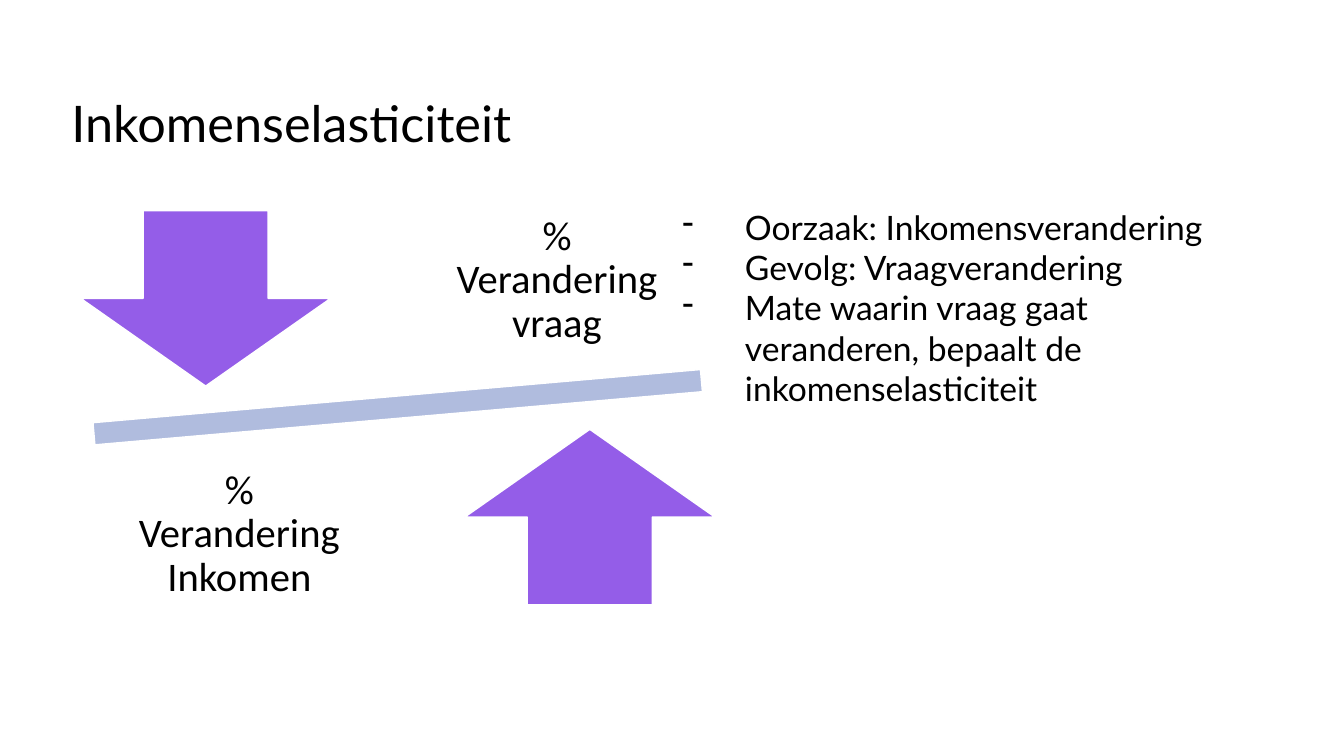
from dataclasses import dataclass

from lxml import etree
from pptx import Presentation
from pptx.dml.color import RGBColor
from pptx.enum.shapes import MSO_SHAPE
from pptx.enum.text import MSO_ANCHOR, PP_ALIGN
from pptx.oxml.ns import qn
from pptx.util import Inches, Pt

DOWN_ARROW = MSO_SHAPE.DOWN_ARROW
UP_ARROW = MSO_SHAPE.UP_ARROW
BEAM = MSO_SHAPE.MATH_MINUS
MIDDLE = MSO_ANCHOR.MIDDLE
CENTER = PP_ALIGN.CENTER


@dataclass(frozen=True)
class Theme:
    text: RGBColor = RGBColor(0x00, 0x00, 0x00)
    outline: RGBColor = RGBColor(0xFF, 0xFF, 0xFF)
    arrow: RGBColor = RGBColor(0x94, 0x5D, 0xE8)
    beam: RGBColor = RGBColor(0xB0, 0xBC, 0xDE)
    main_font: str = "Lato"
    label_font: str = "Calibri"
    title_size: Pt = Pt(36)
    label_size: Pt = Pt(29)
    body_size: Pt = Pt(24)


THEME = Theme()


def style_paragraph(paragraph, font_name, size):
    paragraph.font.name = font_name
    paragraph.font.size = size
    paragraph.font.color.rgb = THEME.text


def add_text_frame(slide, left, top, width, height):
    box = slide.shapes.add_textbox(
        Inches(left), Inches(top), Inches(width), Inches(height))
    box.text_frame.word_wrap = True
    return box.text_frame


def add_title(slide, title):
    frame = add_text_frame(slide, 0.61, 0.86, 10.55, 1.31)
    frame.text = title
    style_paragraph(frame.paragraphs[0], THEME.main_font, THEME.title_size)


def add_balance_part(slide, preset, left, top, width, height, fill, rotation=0):
    part = slide.shapes.add_shape(
        preset, Inches(left), Inches(top), Inches(width), Inches(height))
    part.shadow.inherit = False
    part.fill.solid()
    part.fill.fore_color.rgb = fill
    part.line.color.rgb = THEME.outline
    part.line.width = Pt(1)
    part.rotation = rotation


def add_label(slide, left, top, label):
    frame = add_text_frame(slide, left, top, 2.65, 1.83)
    frame.vertical_anchor = MIDDLE
    frame.margin_left = frame.margin_right = Inches(0.23)
    frame.margin_top = frame.margin_bottom = Inches(0.23)
    frame.text = label
    paragraph = frame.paragraphs[0]
    paragraph.alignment = CENTER
    paragraph.line_spacing = 0.9
    style_paragraph(paragraph, THEME.label_font, THEME.label_size)


def add_dash_list(slide, items):
    frame = add_text_frame(slide, 6.67, 2, 5.58, 2.73)
    frame.text = "\n".join(items)
    indent = Inches(0.62)
    for paragraph in frame.paragraphs:
        properties = paragraph._p.get_or_add_pPr()
        properties.set("marL", str(indent))
        properties.set("indent", str(-indent))
        etree.SubElement(properties, qn("a:buChar")).set("char", "-")
        style_paragraph(paragraph, THEME.main_font, THEME.body_size)


def main():
    presentation = Presentation()
    presentation.slide_width = Inches(13.33)
    presentation.slide_height = Inches(7.5)
    slide = presentation.slides.add_slide(presentation.slide_layouts[6])

    add_title(slide, "Inkomenselasticiteit")
    add_balance_part(slide, BEAM, -0.17, 3.57, 8.23, 0.94, THEME.beam, rotation=355)
    add_balance_part(slide, DOWN_ARROW, 0.8, 2.09, 2.48, 1.74, THEME.arrow)
    add_label(slide, 4.2, 1.87, "% Verandering vraag")
    add_balance_part(slide, UP_ARROW, 4.61, 4.26, 2.48, 1.74, THEME.arrow)
    add_label(slide, 1.05, 4.39, "% Verandering Inkomen")
    add_dash_list(slide, [
        "Oorzaak: Inkomensverandering",
        "Gevolg: Vraagverandering",
        "Mate waarin vraag gaat veranderen, bepaalt de inkomenselasticiteit",
    ])
    presentation.save("out.pptx")


if __name__ == "__main__":
    main()
